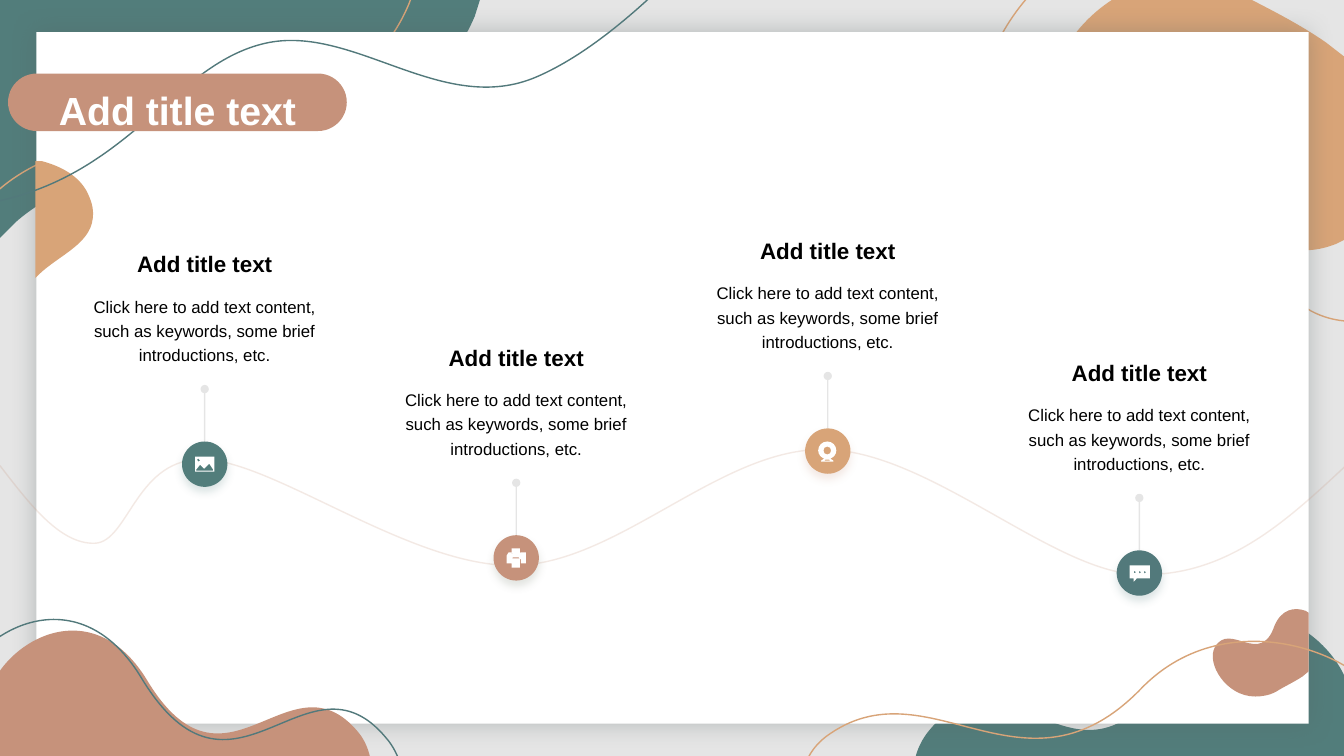
"""Build a four-step timeline slide on a card framed by organic colour shapes."""
from dataclasses import dataclass
from typing import Optional

import lxml.etree
import pptx
import pptx.dml.color
import pptx.enum.shapes
import pptx.enum.text
import pptx.oxml.ns
import pptx.util

RGB = pptx.dml.color.RGBColor
SHAPE = pptx.enum.shapes.MSO_SHAPE
ANCHOR = pptx.enum.text.MSO_ANCHOR

TEAL = RGB(0x52, 0x7D, 0x7B)
DEEP_TEAL = RGB(0x52, 0x79, 0x7B)
SAND = RGB(0xD8, 0xA4, 0x78)
CLAY = RGB(0xC6, 0x92, 0x7B)
OLIVE = RGB(0x72, 0x7B, 0x68)
SLATE = RGB(0x56, 0x63, 0x63)
GREY = RGB(0x80, 0x80, 0x80)
WHITE = RGB(0xFF, 0xFF, 0xFF)
BLACK = RGB(0, 0, 0)

HEADING = "Add title text"
DETAIL = "Click here to add text content, such as keywords, some brief introductions, etc."
COMMANDS = {"M": "a:moveTo", "L": "a:lnTo", "C": "a:cubicBezTo", "Z": "a:close"}
NODE_SIZE, FIRST_NODE_X, NODE_STEP, TEXT_WIDTH = 0.45, 2.03, 3.09, 2.62


@dataclass(frozen=True)
class Outline:
    color: RGB
    filled: bool
    curve: str


@dataclass(frozen=True)
class Shadow:
    color: RGB
    opacity: int
    blur: float
    distance: float = 0
    angle: int = 0


@dataclass(frozen=True)
class Milestone:
    top: float
    fill: RGB
    glow: RGB
    icon: str


BEHIND_CARD = (
    Outline(TEAL, True, "M 13.34 7.51 C 13.4 7.33 13.43 7.14 13.4 6.92 C 13.31 6.29 12.24 5.56 11.59 6.65 "
            "C 10.71 8.1 10 6.31 9.23 7.23 C 9.16 7.31 9.11 7.4 9.08 7.51 Z"),
    Outline(TEAL, True, "M 0 0 L 4.76 0 L 4.71 0.16 C 4.4 0.89 3.65 1.46 2.25 1.55 "
            "C 1.19 1.62 0.54 1.86 0.15 2.21 L 0 2.36 Z"),
    Outline(SAND, True, "M 11.69 -0.21 C 10.8 -0.19 10.18 0.81 10.47 1.3 C 10.93 2.12 11.84 0.68 12.3 1.96 "
            "C 12.49 2.49 12.9 2.56 13.25 2.42 L 13.33 2.38 L 13.33 0.56 L 13.15 0.42 "
            "C 12.86 0.22 12.55 0.07 12.34 -0.04 C 12.12 -0.16 11.9 -0.21 11.69 -0.21 Z"),
    Outline(SAND, False, "M 11.61 -0.72 C 10.31 -0.7 9.42 0.76 9.83 1.48 C 10.51 2.67 11.82 0.57 12.49 2.42 "
            "C 12.77 3.2 13.36 3.3 13.87 3.1 L 13.99 3.04 L 13.99 0.39 L 13.73 0.19 "
            "C 13.31 -0.1 12.85 -0.32 12.56 -0.48 C 12.22 -0.65 11.9 -0.73 11.61 -0.72 Z"),
    Outline(SAND, False, "M -0.15 -0.11 L 4.11 -0.11 L 4.06 0.03 C 3.79 0.69 3.11 1.21 1.86 1.29 "
            "C 0.91 1.36 0.33 1.58 -0.02 1.89 L -0.15 2.03 Z"),
)
OVER_CARD = (
    Outline(CLAY, True, "M -0.08 7.51 C -0.15 7.35 -0.17 7.18 -0.14 6.99 C -0.07 6.43 0.88 5.79 1.46 6.75 "
            "C 2.24 8.04 2.87 6.45 3.55 7.26 C 3.61 7.33 3.65 7.42 3.67 7.51 Z"),
    Outline(SAND, True, "M 0.92 2.17 C 0.89 2.44 0.54 2.55 0.35 2.76 L 0.35 1.6 L 0.42 1.6 "
            "C 0.64 1.66 0.81 1.77 0.88 1.94 C 0.92 2.03 0.93 2.1 0.92 2.17 Z"),
    Outline(DEEP_TEAL, False, "M -0.41 7.61 C -0.48 7.43 -0.51 7.22 -0.48 7 C -0.39 6.35 0.72 5.6 1.4 6.72 "
            "C 2.31 8.23 3.04 6.37 3.83 7.32 C 3.9 7.4 3.95 7.5 3.98 7.61 Z"),
    Outline(DEEP_TEAL, False, "M -4.79 2.32 C -2.97 2.3 -1.14 2.28 0.09 1.97 C 1.33 1.65 1.76 0.63 2.63 0.43 "
            "C 3.51 0.23 4.39 1.17 5.33 0.76 C 6.27 0.35 7.28 -0.85 8.28 -2.05"),
    Outline(CLAY, True, "M 12.45 6.91 C 12.16 6.91 11.96 6.58 12.05 6.42 C 12.2 6.16 12.5 6.62 12.64 6.21 "
            "C 12.71 6.04 12.84 6.02 12.95 6.06 L 12.98 6.08 L 12.98 6.66 L 12.92 6.71 "
            "C 12.83 6.77 12.72 6.82 12.66 6.86 C 12.59 6.9 12.51 6.91 12.45 6.91 Z"),
    Outline(SAND, False, "M 13.65 7.55 C 13.74 7.4 13.78 7.24 13.74 7.05 C 13.62 6.53 12.2 5.92 11.32 6.83 "
            "C 10.15 8.04 9.21 6.55 8.19 7.31 C 8.1 7.38 8.04 7.46 8 7.55 Z"),
)
WAVE = Outline(CLAY, False, "M 0 4.62 C 0.3 5.01 0.6 5.4 0.94 5.39 C 1.28 5.38 1.35 4.52 2.04 4.56 "
               "C 2.74 4.59 4.09 5.63 5.11 5.61 C 6.14 5.59 7.15 4.44 8.18 4.46 "
               "C 9.21 4.47 10.43 5.67 11.29 5.7 C 12.16 5.73 12.76 5.17 13.36 4.61")
PHOTO = ("M .13 .15 L .32 .15 L .32 .3 L .13 .3 Z M .16 .17 L .15 .18 L .16 .2 L .18 .19 Z "
         "M .27 .22 L .22 .27 L .18 .23 L .14 .28 L .14 .29 L .31 .29 L .31 .28 Z")
PRINTER = ("M .19 .23 L .26 .23 L .26 .32 L .18 .32 L .18 .24 Z M .18 .13 L .26 .13 L .26 .18 L .18 .18 Z "
           "M .15 .17 L .18 .17 L .19 .18 L .25 .18 L .27 .17 L .32 .17 L .32 .28 L .27 .28 L .27 .24 "
           "L .25 .22 L .19 .22 L .18 .24 L .18 .28 L .13 .28 L .13 .2 Z")
WEBCAM = ("M .22 .13 C .27 .13 .31 .17 .31 .22 C .31 .26 .28 .29 .25 .3 L .28 .32 L .28 .33 L .16 .33 "
          "L .16 .32 L .19 .3 C .16 .29 .13 .26 .13 .22 C .13 .17 .17 .13 .22 .13 Z M .2 .31 L .19 .32 "
          "L .25 .32 L .24 .31 Z M .22 .18 C .17 .18 .17 .26 .22 .26 C .27 .26 .27 .18 .22 .18 Z")
CHAT = ("M .13 .15 L .33 .15 L .33 .28 L .2 .28 L .17 .31 L .17 .28 L .13 .28 Z "
        + " ".join(f"M {x} .2 L {x + .01} .22 L {x} .23 L {x - .01} .22 Z" for x in (.18, .23, .28)))
MILESTONES = (
    Milestone(4.38, TEAL, TEAL, PHOTO),
    Milestone(5.31, CLAY, OLIVE, PRINTER),
    Milestone(4.25, SAND, CLAY, WEBCAM),
    Milestone(5.46, DEEP_TEAL, DEEP_TEAL, CHAT),
)


def length(inches: float) -> pptx.util.Length:
    return pptx.util.Cm(inches * 2.54)


def add_xml(parent, tag: str, **attributes):
    values = {key: str(value) for key, value in attributes.items()}
    return lxml.etree.SubElement(parent, pptx.oxml.ns.qn(tag), values)


def set_opacity(shape, percent: int) -> None:
    for color in shape._element.spPr.iter(pptx.oxml.ns.qn("a:srgbClr")):
        add_xml(color, "a:alpha", val=percent * 1000)


def paint(shape, color: RGB, filled: bool = True) -> None:
    shape.shadow.inherit = False
    shown, hidden = (shape.fill, shape.line.fill) if filled else (shape.line.fill, shape.fill)
    shown.solid()
    shown.fore_color.rgb = color
    hidden.background()
    if not filled:
        shape.line.width = pptx.util.Pt(1)


def add_block(slide, kind, box: tuple, fill: RGB, shadow: Optional[Shadow] = None):
    block = slide.shapes.add_shape(kind, *map(length, box))
    paint(block, fill)
    if shadow:
        effects = block._element.spPr.find(pptx.oxml.ns.qn("a:effectLst"))
        outer = add_xml(effects, "a:outerShdw", blurRad=pptx.util.Pt(shadow.blur), algn="ctr", rotWithShape=0,
                        dist=pptx.util.Pt(shadow.distance), dir=shadow.angle * 60000)
        add_xml(add_xml(outer, "a:srgbClr", val=shadow.color), "a:alpha", val=shadow.opacity * 1000)
    return block


def cubic(points: list, t: float) -> tuple:
    weights = ((1 - t) ** 3, 3 * t * (1 - t) ** 2, 3 * t * t * (1 - t), t ** 3)
    return tuple(sum(w * p[axis] for w, p in zip(weights, points)) for axis in (0, 1))


def add_outline(slide, outline: Outline, left: float = 0, top: float = 0):
    segments, trace = [], []
    for word in outline.curve.split():
        if word in COMMANDS:
            segments.append((word, []))
        else:
            segments[-1][1].append(float(word))
    segments = [(command, [(length(x + left), length(y + top)) for x, y in zip(numbers[::2], numbers[1::2])])
                for command, numbers in segments]
    for command, points in segments:
        trace += [cubic([trace[-1], *points], step / 20) for step in range(1, 21)] if command == "C" else points
    builder = slide.shapes.build_freeform(*trace[0])
    builder.add_line_segments(trace[1:], close=False)
    drawn = builder.convert_to_shape()
    geometry = next(drawn._element.spPr.iter(pptx.oxml.ns.qn("a:path")))
    for child in list(geometry):
        geometry.remove(child)
    for command, points in segments:
        segment = add_xml(geometry, COMMANDS[command])
        for x, y in points:
            add_xml(segment, "a:pt", x=x - drawn.left, y=y - drawn.top)
    paint(drawn, outline.color, outline.filled)
    return drawn


def add_label(slide, box: tuple, text: str, size: int, color: RGB, bold: bool, anchor=ANCHOR.TOP) -> None:
    frame = slide.shapes.add_textbox(*map(length, box)).text_frame
    frame.word_wrap, frame.vertical_anchor = True, anchor
    frame.auto_size = pptx.enum.text.MSO_AUTO_SIZE.SHAPE_TO_FIT_TEXT
    paragraph = frame.paragraphs[0]
    paragraph.text, paragraph.line_spacing = text, 1.2
    paragraph.alignment = pptx.enum.text.PP_ALIGN.CENTER
    paragraph.font.name, paragraph.font.size = "Arial", pptx.util.Pt(size)
    paragraph.font.bold, paragraph.font.color.rgb = bold, color


def add_milestone(slide, step: Milestone, center: float) -> None:
    left, text_left = center - NODE_SIZE / 2, center - TEXT_WIDTH / 2
    stem = slide.shapes.add_connector(pptx.enum.shapes.MSO_CONNECTOR.STRAIGHT,
                                      *map(length, (center, step.top, center, step.top - 0.52)))
    stem.line.color.rgb, stem.line.width = GREY, pptx.util.Pt(1)
    set_opacity(stem, 20)
    add_xml(stem._element.spPr.find(pptx.oxml.ns.qn("a:ln")), "a:tailEnd", type="oval")
    add_xml(stem._element.spPr, "a:effectLst")
    add_block(slide, SHAPE.OVAL, (left, step.top, NODE_SIZE, NODE_SIZE), step.fill, Shadow(step.glow, 20, 6, 4, 90))
    add_outline(slide, Outline(WHITE, True, step.icon), left, step.top)
    add_label(slide, (text_left, step.top - 1.98, TEXT_WIDTH, 0.4), HEADING, 16, BLACK, True, ANCHOR.BOTTOM)
    add_label(slide, (text_left, step.top - 1.53, TEXT_WIDTH, 0.81), DETAIL, 12, BLACK, False)


deck = pptx.Presentation()
deck.slide_width, deck.slide_height = length(13.33), length(7.5)
page = deck.slides.add_slide(deck.slide_layouts[6])
set_opacity(add_block(page, SHAPE.RECTANGLE, (0, -0.01, 13.33, 7.52), GREY), 20)
for backdrop in BEHIND_CARD:
    add_outline(page, backdrop)
add_block(page, SHAPE.RECTANGLE, (0.36, 0.32, 12.62, 6.86), WHITE, Shadow(SLATE, 35, 17))
for accent in OVER_CARD:
    add_outline(page, accent)
add_block(page, SHAPE.ROUNDED_RECTANGLE, (0.08, 0.73, 3.36, 0.57), CLAY).adjustments[0] = 0.5
add_label(page, (0.37, 0.71, 2.78, 0.63), HEADING, 28, WHITE, True)
set_opacity(add_outline(page, WAVE), 20)
for index, milestone in enumerate(MILESTONES):
    add_milestone(page, milestone, FIRST_NODE_X + index * NODE_STEP)
deck.save("out.pptx")
